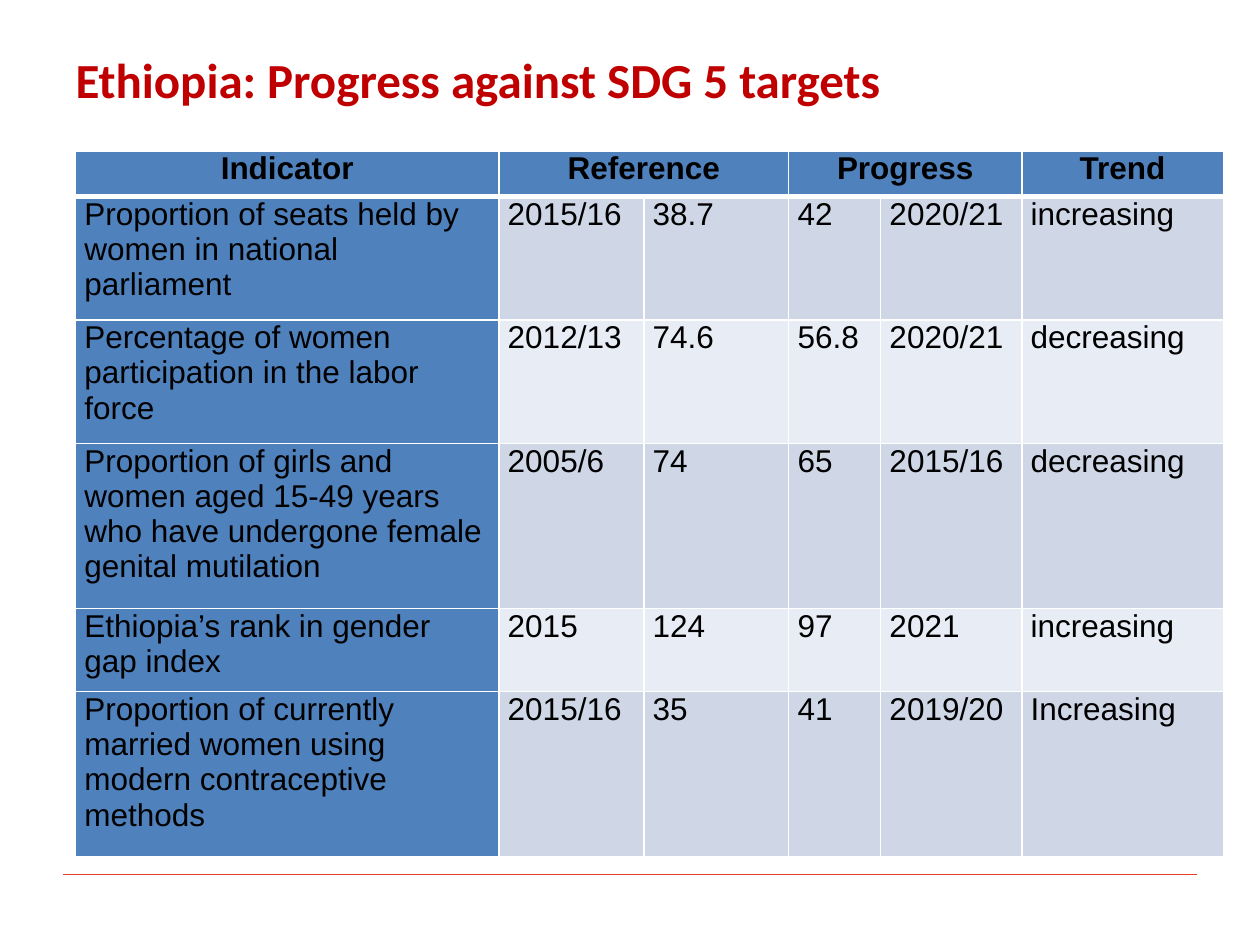
import pptx
import pptx.dml.color
import pptx.enum.shapes
import pptx.enum.text
import pptx.oxml
import pptx.oxml.ns
import pptx.util
from pptx.dml.color import RGBColor
from pptx.util import Inches

RED = RGBColor(0xC0, 0x00, 0x00)
ORANGE = RGBColor(0xE5, 0x43, 0x24)
BLACK = RGBColor(0x00, 0x00, 0x00)
WHITE = RGBColor(0xFF, 0xFF, 0xFF)
BLUE = RGBColor(0x4F, 0x81, 0xBD)
BANDS = (RGBColor(0xCF, 0xD7, 0xE7), RGBColor(0xE8, 0xEC, 0xF4))

TITLE_FONT = {"name": "Calibri", "size": pptx.util.Pt(28), "bold": True}
HEADER_FONT = {"name": "Arial", "size": pptx.util.Pt(18), "bold": True}
BODY_FONT = {**HEADER_FONT, "bold": False}
CELL_MARGINS = {
    "margin_left": Inches(0.07), "margin_right": Inches(0.07),
    "margin_top": 0, "margin_bottom": 0,
}
BOX_FORMAT = {
    "margin_left": 0, "margin_right": 0, "margin_top": 0, "margin_bottom": 0,
    "word_wrap": True, "vertical_anchor": pptx.enum.text.MSO_ANCHOR.TOP,
}

COLUMN_WIDTHS = (3.36, 1.15, 1.15, 0.73, 1.12, 1.6)
ROW_HEIGHTS = (0.36, 0.98, 0.98, 1.31, 0.66, 1.31)
# Heading, first column, last column
HEADINGS = (("Indicator", 0, 0), ("Reference", 1, 2), ("Progress", 3, 4), ("Trend", 5, 5))
INDICATORS = (
    ("Proportion of seats held by women in national parliament",
     "2015/16", "38.7", "42", "2020/21", "increasing"),
    ("Percentage of women participation in the labor force",
     "2012/13", "74.6", "56.8", "2020/21", "decreasing"),
    ("Proportion of girls and women aged 15-49 years who have undergone "
     "female genital mutilation",
     "2005/6", "74", "65", "2015/16", "decreasing"),
    ("Ethiopia’s rank in gender gap index",
     "2015", "124", "97", "2021", "increasing"),
    ("Proportion of currently married women using modern contraceptive methods",
     "2015/16", "35", "41", "2019/20", "Increasing"),
)


def apply_format(target, values):
    for name, value in values.items():
        setattr(target, name, value)


class SlideBuilder:
    def __init__(self, slide):
        self.slide = slide

    def fill_text(self, frame, text, font, color, align=None):
        frame.text = text
        paragraph = frame.paragraphs[0]
        paragraph.alignment = align
        run_font = paragraph.runs[0].font
        apply_format(run_font, font)
        run_font.color.rgb = color

    def title(self, text, left, top, width, height):
        frame = self.slide.shapes.add_textbox(left, top, width, height).text_frame
        apply_format(frame, BOX_FORMAT)
        self.fill_text(frame, text, TITLE_FONT, RED)

    def rule(self, left, right, y):
        footer_rule = self.slide.shapes.add_connector(
            pptx.enum.shapes.MSO_CONNECTOR.STRAIGHT, left, y, right, y)
        footer_rule.line.color.rgb = ORANGE
        footer_rule.line.width = pptx.util.Pt(0.75)
        properties = footer_rule._element.spPr
        properties.append(properties.makeelement(pptx.oxml.ns.qn("a:effectLst"), {}))

    def borders(self, cell, top, bottom):
        properties = cell._tc.get_or_add_tcPr()
        for side, points in (("L", 1), ("R", 1), ("T", top), ("B", bottom)):
            properties.append(pptx.oxml.parse_xml(
                f'<a:ln{side} {pptx.oxml.ns.nsdecls("a")} w="{pptx.util.Pt(points)}">'
                f'<a:solidFill><a:srgbClr val="{WHITE}"/></a:solidFill></a:ln{side}>'))

    def table(self, left, top):
        grid = self.slide.shapes.add_table(
            len(ROW_HEIGHTS), len(COLUMN_WIDTHS), left, top,
            Inches(sum(COLUMN_WIDTHS)), Inches(sum(ROW_HEIGHTS))).table
        for column, width in zip(grid.columns, COLUMN_WIDTHS):
            column.width = Inches(width)
        for row, height in zip(grid.rows, ROW_HEIGHTS):
            row.height = Inches(height)

        # Cell style: blue header and first column, banded body
        for r, row in enumerate(grid.rows):
            for c, cell in enumerate(row.cells):
                apply_format(cell, CELL_MARGINS)
                self.borders(cell, 3 if r == 1 else 1, 3 if r == 0 else 1)
                cell.fill.solid()
                cell.fill.fore_color.rgb = BLUE if r == 0 or c == 0 else BANDS[(r - 1) % 2]

        # Header row
        for heading, first, last in HEADINGS:
            cell = grid.cell(0, first)
            if last > first:
                cell.merge(grid.cell(0, last))
            self.fill_text(cell.text_frame, heading, HEADER_FONT, BLACK,
                           pptx.enum.text.PP_ALIGN.CENTER)

        # Indicator rows
        for r, indicator in enumerate(INDICATORS, 1):
            for c, value in enumerate(indicator):
                self.fill_text(grid.cell(r, c).text_frame, value, BODY_FONT, BLACK)


def main():
    deck = pptx.Presentation()
    deck.slide_width, deck.slide_height = Inches(10), Inches(7.5)
    builder = SlideBuilder(deck.slides.add_slide(deck.slide_layouts[6]))

    builder.rule(Inches(0.5), Inches(9.5), Inches(6.94))
    builder.title("Ethiopia: Progress against SDG 5 targets",
                  Inches(0.6), Inches(0.39), Inches(9.1), Inches(0.62))
    builder.table(Inches(0.6), Inches(1.2))

    deck.save("out.pptx")


if __name__ == "__main__":
    main()
